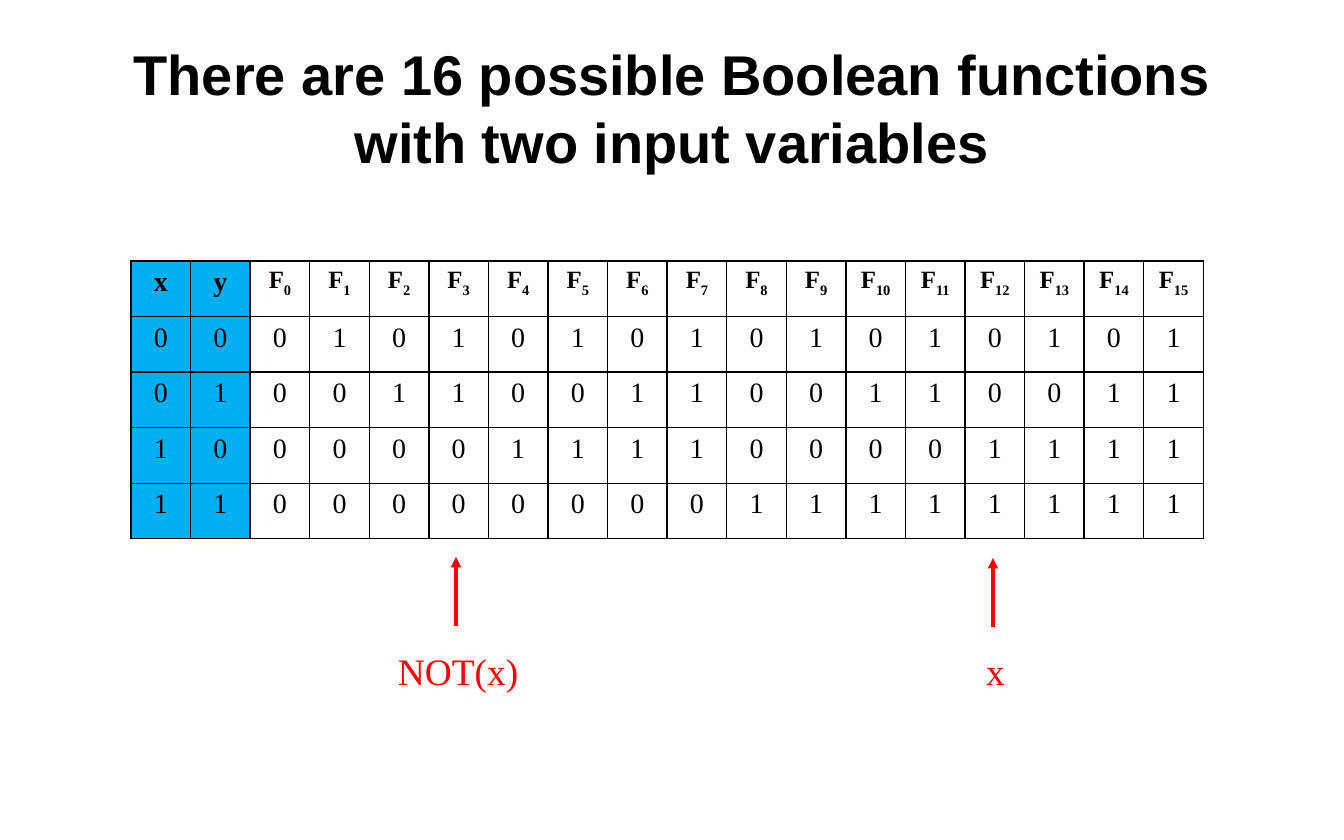
from lxml import etree
from pptx import Presentation
from pptx.dml.color import RGBColor
from pptx.enum.shapes import MSO_CONNECTOR
from pptx.enum.text import MSO_ANCHOR, PP_ALIGN
from pptx.oxml import parse_xml
from pptx.oxml.ns import nsdecls, qn
from pptx.util import Pt

SCALE = 914400 / 112
BLACK = RGBColor(0x00, 0x00, 0x00)
RED = RGBColor(0xFF, 0x00, 0x00)
BLUE = RGBColor(0x00, 0xB0, 0xF0)
CENTER = PP_ALIGN.CENTER
MIDDLE = MSO_ANCHOR.MIDDLE
STRAIGHT = MSO_CONNECTOR.STRAIGHT
SERIF = "Times New Roman"
INPUTS = 2
FUNCTIONS = 16
ROWS = 5
COLUMNS = INPUTS + FUNCTIONS


def px(length):
    return round(length * SCALE)


def set_font(paragraph, name, size, color, bold=False):
    font = paragraph.font
    font.name, font.size, font.bold = name, Pt(size), bold
    font.color.rgb = color


presentation = Presentation()
presentation.slide_width = px(1344)
presentation.slide_height = px(840)
slide = presentation.slides.add_slide(presentation.slide_layouts[6])

# Title
title = slide.shapes.add_textbox(px(112), px(37), px(1120), px(140))
title.text_frame.word_wrap = True
title.text_frame.vertical_anchor = MIDDLE
paragraph = title.text_frame.paragraphs[0]
paragraph.text = "There are 16 possible Boolean functions\vwith two input variables"
paragraph.alignment = CENTER
set_font(paragraph, "Arial", 36, BLACK, bold=True)

# Truth table: bit n of k is the value of F(k) in input row n
table = slide.shapes.add_table(ROWS, COLUMNS, px(131), px(261), px(1073), px(278)).table
table.first_row = False
table.horz_banding = False
for column in table.columns:
    column.width = px(1073) // COLUMNS
for row in table.rows:
    row.height = px(278) // ROWS

header = ["x", "y"] + ["F"] * FUNCTIONS
values = [[n >> 1, n & 1] + [k >> n & 1 for k in range(FUNCTIONS)] for n in range(ROWS - 1)]
for row_index, row_values in enumerate([header] + values):
    for column_index, value in enumerate(row_values):
        cell = table.cell(row_index, column_index)
        is_header = row_index == 0
        is_input = column_index < INPUTS
        paragraph = cell.text_frame.paragraphs[0]
        paragraph.alignment = CENTER
        paragraph.add_run().text = str(value)
        if is_header and not is_input:
            subscript = paragraph.add_run()
            subscript.text = str(column_index - INPUTS)
            subscript.font._element.set("baseline", "-25000")
        size = 16 if is_header and not is_input else 18
        set_font(paragraph, SERIF, size, BLACK, bold=is_header)
        for side in ("lnL", "lnR", "lnT", "lnB"):
            cell._tc.get_or_add_tcPr().append(parse_xml(
                f'<a:{side} {nsdecls("a")} w="12700"><a:solidFill>'
                f'<a:srgbClr val="{BLACK}"/></a:solidFill></a:{side}>'))
        if is_input:
            cell.fill.solid()
            cell.fill.fore_color.rgb = BLUE
        else:
            cell.fill.background()

# Marked functions: label, label left, label width, arrow x, arrow top
for text, left, width, arrow_x, arrow_top in (
    ("NOT(x)", 387, 145, 456, 557),
    ("x", 975, 42, 993, 558),
):
    arrow = slide.shapes.add_connector(
        STRAIGHT, px(arrow_x), px(arrow_top + 69), px(arrow_x), px(arrow_top))
    arrow.line.color.rgb = RED
    arrow.line.width = Pt(2.25)
    etree.SubElement(arrow.line._get_or_add_ln(), qn("a:tailEnd"), type="triangle")
    etree.SubElement(arrow._element.spPr, qn("a:effectLst"))

    label = slide.shapes.add_textbox(px(left), px(643), px(width), px(57))
    label.text_frame.word_wrap = False
    paragraph = label.text_frame.paragraphs[0]
    paragraph.text = text
    set_font(paragraph, SERIF, 24, RED)

presentation.save("out.pptx")
